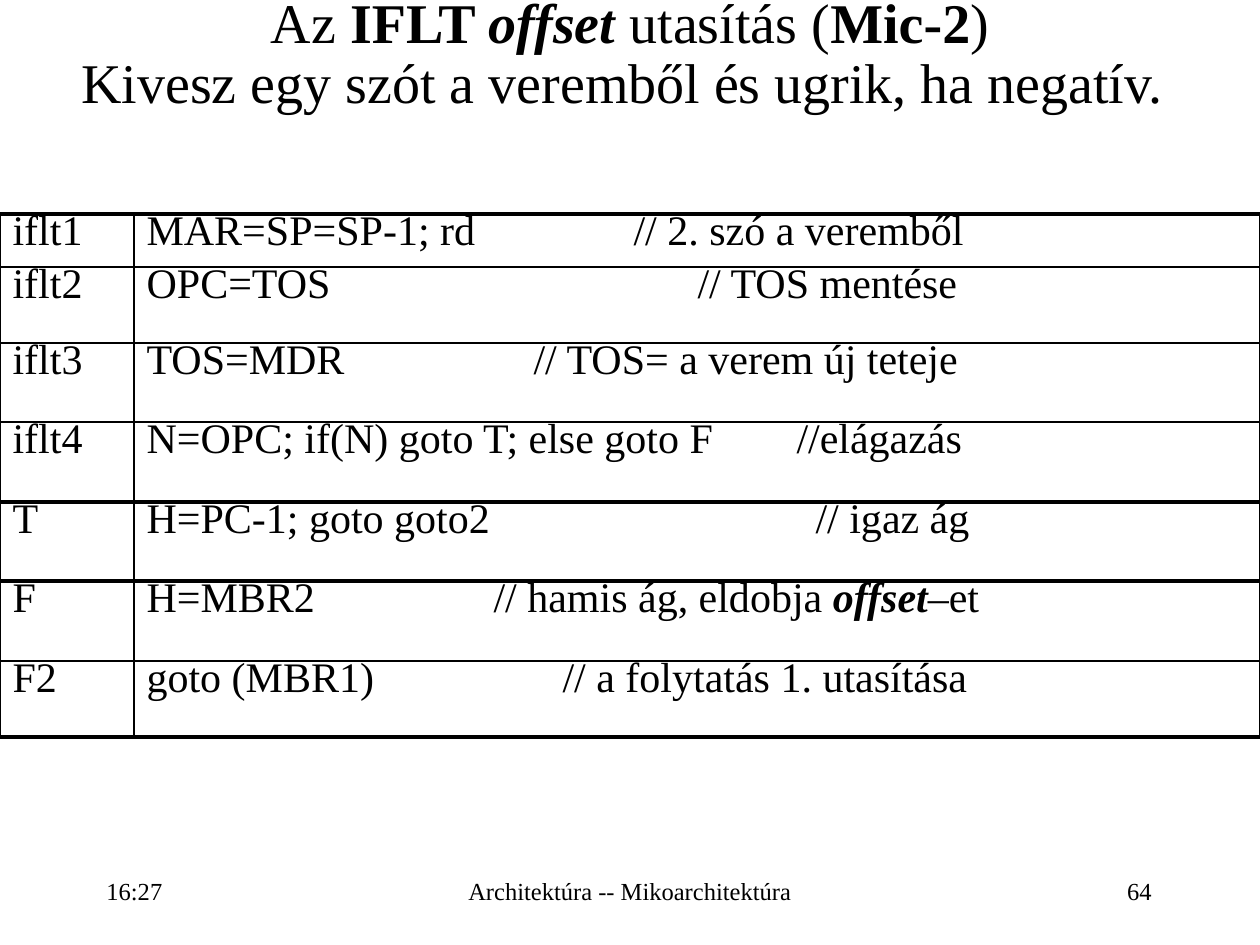
from dataclasses import dataclass

from lxml.etree import SubElement
from pptx import Presentation
from pptx.dml.color import RGBColor
from pptx.enum.text import MSO_ANCHOR, PP_ALIGN
from pptx.oxml.ns import qn
from pptx.util import Emu, Pt

EMU_PER_PX = 914400 / 126
FONT = "Times New Roman"
BLACK = "000000"
TEXT_INSET = 13


@dataclass
class Span:
    text: str
    bold: bool = False
    italic: bool = False


@dataclass
class Step:
    label: str
    code: str
    comment: list[Span]
    comment_x: int
    height: int


@dataclass
class Footer:
    text: str
    left: int
    top: int
    width: int
    height: int
    align: PP_ALIGN


OFFSET = Span("offset", bold=True, italic=True)

TITLE = [
    [Span("Az "), Span("IFLT ", bold=True), OFFSET, Span(" utasítás ("),
     Span("Mic-2", bold=True), Span(")")],
    [Span("Kivesz egy szót a veremből és ugrik, ha negatív. ")],
]

STEPS = [
    Step("iflt1", "MAR=SP=SP-1; rd", [Span("// 2. szó a veremből")], 634, 53),
    Step("iflt2", "OPC=TOS", [Span("// TOS mentése")], 698, 76),
    Step("iflt3", "TOS=MDR", [Span("// TOS= a verem új teteje")], 534, 79),
    Step("iflt4", "N=OPC; if(N) goto T; else goto F", [Span("//elágazás")], 797, 80),
    Step("T", "H=PC-1; goto goto2", [Span("// igaz ág")], 816, 79),
    Step("F", "H=MBR2", [Span("// hamis ág, eldobja "), OFFSET, Span("–et")], 494, 80),
    Step("F2", "goto (MBR1)", [Span("// a folytatás 1. utasítása")], 563, 76),
]
COLUMN_WIDTHS = [134, 1126]
TABLE_TOP = 214
THIN, THICK = 1, 2.25
RULES = [THICK, THIN, THIN, THIN, THICK, THICK, THIN, THICK]

FOOTERS = [
    Footer("64", 903, 861, 261, 62, PP_ALIGN.RIGHT),
    Footer("Architektúra -- Mikoarchitektúra", 431, 861, 398, 62, PP_ALIGN.CENTER),
    Footer("16:27", 94, 858, 261, 68, PP_ALIGN.LEFT),
]


def px(length: int) -> Emu:
    return Emu(round(length * EMU_PER_PX))


def color(value: str) -> RGBColor:
    return RGBColor.from_string(value)


def write(para, spans: list[Span], *, size: int, align=PP_ALIGN.LEFT,
          line_spacing=0.69, before=8) -> None:
    para.alignment = align
    para.line_spacing = line_spacing
    para.space_before = Pt(before)
    for span in spans:
        run = para.add_run()
        run.text = span.text
        font = run.font
        font.name, font.size = FONT, Pt(size)
        font.bold, font.italic = span.bold, span.italic
        font.color.rgb = color(BLACK)


def add_box(slide, left: int, top: int, width: int, height: int, anchor: MSO_ANCHOR):
    box = slide.shapes.add_textbox(px(left), px(top), px(width), px(height))
    frame = box.text_frame
    frame.word_wrap = True
    frame.vertical_anchor = anchor
    return frame


def add_title(slide) -> None:
    frame = add_box(slide, 0, 0, 1260, 850, MSO_ANCHOR.TOP)
    for index, spans in enumerate(TITLE):
        para = frame.add_paragraph() if index else frame.paragraphs[0]
        write(para, spans, size=32, align=PP_ALIGN.CENTER)
        properties = para._p.get_or_add_pPr()
        properties.set("marL", str(px(45)))
        properties.set("indent", str(px(-45)))


def set_borders(cell, top: float, bottom: float) -> None:
    properties = cell._tc.get_or_add_tcPr()
    sides = {"a:lnL": THIN, "a:lnR": THIN, "a:lnT": top, "a:lnB": bottom}
    for tag, width in sides.items():
        line = SubElement(properties, qn(tag), w=str(Pt(width)))
        fill = SubElement(line, qn("a:solidFill"))
        SubElement(fill, qn("a:srgbClr"), val=BLACK)


def set_tab(para, position: int) -> None:
    tabs = SubElement(para._p.get_or_add_pPr(), qn("a:tabLst"))
    SubElement(tabs, qn("a:tab"), pos=str(px(position)), algn="l")


def add_steps(slide) -> None:
    height = sum(step.height for step in STEPS)
    table = slide.shapes.add_table(
        len(STEPS), len(COLUMN_WIDTHS), 0, px(TABLE_TOP),
        px(sum(COLUMN_WIDTHS)), px(height)).table
    table.first_row = table.horz_banding = False
    for column, width in zip(table.columns, COLUMN_WIDTHS):
        column.width = px(width)
    text_left = COLUMN_WIDTHS[0] + TEXT_INSET
    for row, step, top, bottom in zip(table.rows, STEPS, RULES, RULES[1:]):
        row.height = px(step.height)
        contents = [[Span(step.label)], [Span(step.code + "\t"), *step.comment]]
        for cell, spans in zip(row.cells, contents):
            write(cell.text_frame.paragraphs[0], spans, size=24)
            set_borders(cell, top, bottom)
            cell.fill.background()
        set_tab(row.cells[1].text_frame.paragraphs[0], step.comment_x - text_left)


def add_footer(slide, footer: Footer) -> None:
    frame = add_box(slide, footer.left, footer.top, footer.width, footer.height,
                    MSO_ANCHOR.MIDDLE)
    write(frame.paragraphs[0], [Span(footer.text)], size=14, align=footer.align,
          line_spacing=0.93, before=0)


def main() -> None:
    deck = Presentation()
    deck.slide_width, deck.slide_height = px(1260), px(945)
    page = deck.slides.add_slide(deck.slide_layouts[6])
    page.background.fill.solid()
    page.background.fill.fore_color.rgb = color("FFFFFF")
    add_title(page)
    add_steps(page)
    for footer in FOOTERS:
        add_footer(page, footer)
    deck.save("out.pptx")


if __name__ == "__main__":
    main()
